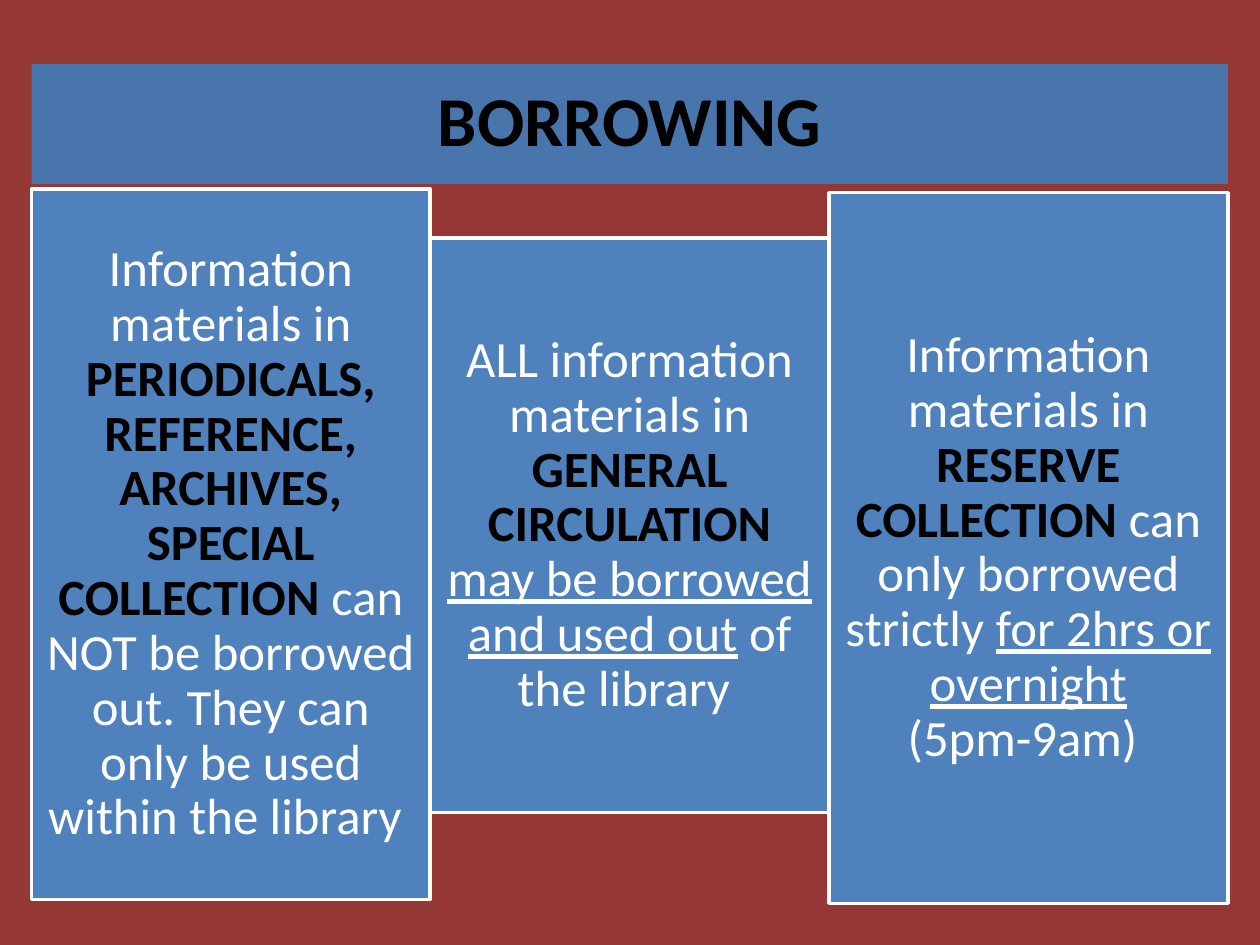
from pptx import Presentation
from pptx.dml.color import RGBColor
from pptx.enum.shapes import MSO_SHAPE
from pptx.enum.text import MSO_ANCHOR, MSO_AUTO_SIZE, PP_ALIGN
from pptx.util import Inches, Pt

MAROON = RGBColor(0x95, 0x37, 0x35)
BANNER_BLUE = RGBColor(0x48, 0x75, 0xAC)
PANEL_BLUE = RGBColor(0x4F, 0x81, 0xBD)
WHITE = RGBColor(0xFF, 0xFF, 0xFF)
BLACK = RGBColor(0, 0, 0)

LEFT, PANEL_W = 0.25, 3.165
PLAIN, STRONG, UNDER = "plain", "strong", "under"

PANELS = [
    (1.5, 5.64, [
        ("Information materials in ", PLAIN),
        ("PERIODICALS, REFERENCE, ARCHIVES, SPECIAL COLLECTION ", STRONG),
        ("can NOT be borrowed out. They can only be used within the library ", PLAIN),
    ]),
    (1.89, 4.56, [
        ("ALL information materials in ", PLAIN),
        ("GENERAL CIRCULATION ", STRONG),
        ("may be borrowed and used out", UNDER),
        (" of the library ", PLAIN),
    ]),
    (1.53, 5.64, [
        ("Information materials in ", PLAIN),
        ("RESERVE COLLECTION ", STRONG),
        ("can only borrowed strictly ", PLAIN),
        ("for 2hrs or overnight", UNDER),
        (" (5pm-9am) ", PLAIN),
    ]),
]


def fill_text(sp, runs, size, inset):
    """Write styled runs as one centred paragraph."""
    tf = sp.text_frame
    tf.word_wrap = True
    tf.auto_size = MSO_AUTO_SIZE.NONE
    tf.vertical_anchor = MSO_ANCHOR.MIDDLE
    tf.margin_left = tf.margin_right = Inches(inset)
    tf.margin_top = tf.margin_bottom = Inches(inset)
    p = tf.paragraphs[0]
    p.alignment = PP_ALIGN.CENTER
    p.line_spacing = 0.9
    for text, style in runs:
        r = p.add_run()
        r.text = text
        r.font.name = "Calibri"
        r.font.size = Pt(size)
        r.font.bold = style == STRONG
        r.font.underline = style == UNDER
        r.font.color.rgb = BLACK if style == STRONG else WHITE


def add_banner(s, text):
    """Turn the title placeholder into the full-width banner."""
    sp = s.shapes.title
    sp.left, sp.top = Inches(LEFT), Inches(0.51)
    sp.width, sp.height = Inches(3 * PANEL_W), Inches(0.95)
    sp.fill.solid()
    sp.fill.fore_color.rgb = BANNER_BLUE
    fill_text(sp, [(text, STRONG)], 40, 0.17)


def add_panel(s, column, top, height, runs):
    """Add one outlined text panel in the given column."""
    sp = s.shapes.add_shape(
        MSO_SHAPE.RECTANGLE, Inches(LEFT + column * PANEL_W), Inches(top),
        Inches(PANEL_W), Inches(height))
    sp.shadow.inherit = False
    sp.fill.solid()
    sp.fill.fore_color.rgb = PANEL_BLUE
    sp.line.color.rgb = WHITE
    sp.line.width = Pt(2)
    fill_text(sp, runs, 29, 0.12)


def main():
    """Build the borrowing rules slide."""
    prs = Presentation()
    prs.slide_width, prs.slide_height = Inches(10), Inches(7.5)
    s = prs.slides.add_slide(prs.slide_layouts[5])
    s.background.fill.solid()
    s.background.fill.fore_color.rgb = MAROON
    add_banner(s, "BORROWING")
    for column, (top, height, runs) in enumerate(PANELS):
        add_panel(s, column, top, height, runs)
    prs.save("out.pptx")


if __name__ == "__main__":
    main()
